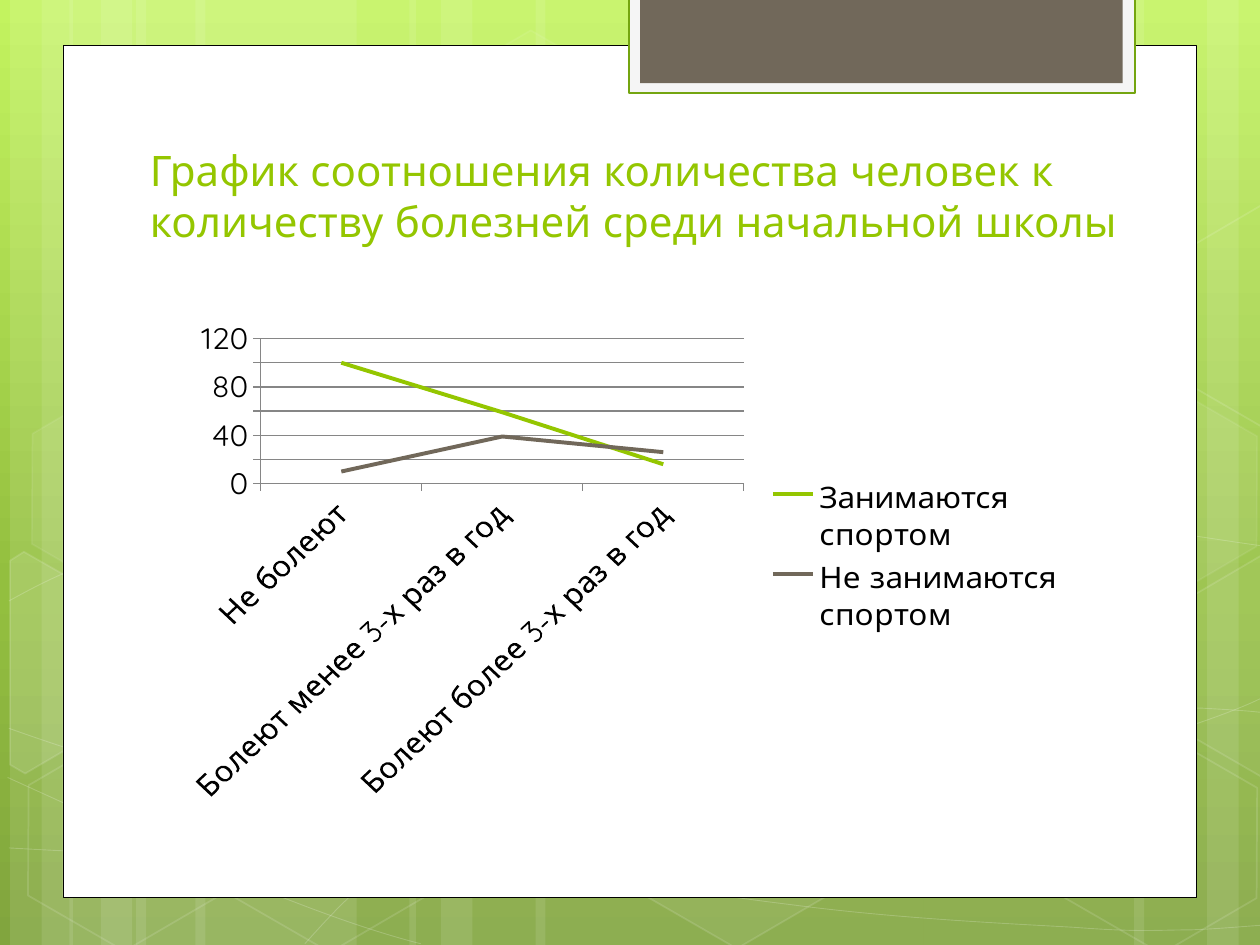
from copy import deepcopy
from lxml import etree
from pptx import Presentation
from pptx.chart.data import CategoryChartData
from pptx.dml.color import RGBColor
from pptx.enum.chart import XL_CHART_TYPE, XL_LEGEND_POSITION, XL_TICK_MARK
from pptx.enum.shapes import MSO_SHAPE
from pptx.enum.text import MSO_ANCHOR, MSO_AUTO_SIZE, PP_ALIGN
from pptx.oxml.ns import qn
from pptx.util import Inches, Pt

RECT, HEX = MSO_SHAPE.RECTANGLE, MSO_SHAPE.HEXAGON
LINE, RIGHT = XL_CHART_TYPE.LINE, XL_LEGEND_POSITION.RIGHT
OUT = XL_TICK_MARK.OUTSIDE
BOTTOM, LEFT, NOFIT = MSO_ANCHOR.BOTTOM, PP_ALIGN.LEFT, MSO_AUTO_SIZE.NONE
FONT = "Quicksand"
WHITE, BLACK, GREEN, BROWN, GRAY = "FFFFFF", "000000", "94C600", "71685A", "868686"

TITLE = "График соотношения количества человек к количеству болезней среди начальной школы"
CATS = ["Не болеют", "Болеют менее 3-х раз в год", "Болеют более 3-х раз в год"]
SERIES = [
    ("Занимаются спортом", [100, 59, 16], GREEN),
    ("Не занимаются спортом", [10, 39, 26], BROWN),
]
STOPS = [(0, "C3F35F"), (0.62, "93BF3F"), (1, "81A53E")]
BANDS = [
    (1.08, 1.75, 0), (0.08, 0.5, 0), (0.33, 0.83, 0), (1.55, 1.75, 0),
    (0.55, 0.5, 0), (0.8, 0.83, 0), (7.33, 1.75, 180), (9.58, 0.5, 180),
    (9, 0.83, 180), (4.25, 3.08, 0), (3.25, 0.5, 0), (3.5, 0.83, 0),
]
CURVES = [
    ([(0.07, 6.73), (0.61, 6.76), (1.15, 6.79), (1.9, 6.78), (2.65, 6.77),
      (3.58, 6.75), (4.58, 6.65), (5.58, 6.55), (7, 6.36), (7.92, 6.17),
      (8.83, 5.98), (9.77, 5.68), (10.07, 5.51)], "CCCC"),
    ([(0.07, 4.77), (0.36, 4.61), (0.65, 4.46), (1.21, 4.31), (1.78, 4.16),
      (2.59, 3.94), (3.47, 3.87), (4.36, 3.8), (5.44, 3.79), (6.54, 3.87),
      (7.64, 3.95), (9.47, 4.26), (10.07, 4.34)], "CCCC"),
    ([(0.06, 6.17), (1.27, 6.72), (2.47, 7.27), (3.34, 7.49)], "C"),
    ([(0.07, 5.78), (0.38, 5.89), (0.7, 6), (1.28, 6.16), (1.86, 6.31),
      (2.73, 6.56), (3.57, 6.73), (4.4, 6.9), (5.45, 7.08), (6.28, 7.18),
      (7.11, 7.29), (8, 7.33), (8.53, 7.36), (9.05, 7.4), (9.19, 7.38),
      (9.45, 7.38), (9.71, 7.37), (9.89, 7.35), (10.07, 7.34)], "CCCCCC"),
    ([(2.42, 7.49), (2.6, 7.29), (2.78, 7.09), (3.02, 6.91), (3.26, 6.73),
      (3.6, 6.53), (3.88, 6.39), (4.16, 6.25), (4.33, 6.19), (4.7, 6.09),
      (5.06, 5.99), (5.73, 5.85), (6.08, 5.78), (6.44, 5.71), (6.49, 5.71),
      (6.8, 5.69), (7.11, 5.66), (7.6, 5.63), (7.94, 5.62), (8.29, 5.61),
      (8.86, 5.62), (8.86, 5.62), (9.53, 5.62), (9.71, 5.63), (9.88, 5.64),
      (9.97, 5.65), (10.06, 5.66), (10.03, 5.65), (10.06, 5.66)], "CCCCCCCLCC"),
]
HEXES = [
    (3.34, 0.36, 4, 8), (4.97, 5.89, 6, 12), (0.11, 5.91, 0, 12),
    (0.14, 3.12, 7, 8), (1.74, 5.92, 0, 12), (7.53, 4.53, 10, 12),
    (8.34, 5.93, 0, 12), (8.34, 3.14, 7, 8),
]
CUTS = [
    ([(0.08, 4.45), (0.19, 4.38), (0.96, 4.82), (0.95, 5.7), (0.2, 6.14), (0.08, 6.07)], 10),
    ([(9.26, 4.85), (10.01, 4.41), (10.09, 4.46), (10.09, 6.13), (10.02, 6.17), (9.26, 5.73)], 4),
    ([(9.26, 2.07), (10.01, 1.63), (10.1, 1.68), (10.09, 3.35), (10.02, 3.39), (9.26, 2.95)], 0),
]
PANELS = [
    ((0.5, 0.36, 9, 6.76), WHITE, BLACK, 0.5),
    ((4.99, -0.02, 4.02, 0.76), "F5F5F5", "74A510", 1.25),
    ((5.08, -0.02, 3.83, 0.68), BROWN, None, 0),
]


def rgb(code):
    return RGBColor.from_string(code)


def fade(shape, route, alpha):
    if alpha < 100:
        tint = shape.element.spPr.find("/".join(qn(tag) for tag in route))
        etree.SubElement(tint, qn("a:alpha"), val=str(alpha * 1000))


def paint(shape, fill=None, alpha=100, line=None, width=1, clear=100):
    shape.shadow.inherit = False
    if fill and alpha:
        shape.fill.solid()
        shape.fill.fore_color.rgb = rgb(fill)
        fade(shape, ["a:solidFill", "a:srgbClr"], alpha)
    else:
        shape.fill.background()
    if line:
        shape.line.color.rgb = rgb(line)
        shape.line.width = Pt(width)
        fade(shape, ["a:ln", "a:solidFill", "a:srgbClr"], clear)
    else:
        shape.line.fill.background()


def add(slide, kind, box):
    return slide.shapes.add_shape(kind, *map(Inches, box))


def trace(slide, points, close):
    spots = [(Inches(x), Inches(y)) for x, y in points]
    pen = slide.shapes.build_freeform(*spots[0])
    pen.add_line_segments(spots[1:], close=close)
    return pen.convert_to_shape()


def bend(shape, kinds):
    legs = iter(list(shape.element.iter(qn("a:lnTo"))))
    for kind in kinds:
        leg = next(legs)
        if kind == "C":
            leg.addprevious(curve := etree.Element(qn("a:cubicBezTo")))
            for part in (leg, next(legs), next(legs)):
                curve.append(part[0])
                part.getparent().remove(part)


def set_back(slide):
    fill = slide.background.fill
    fill.gradient()
    fill.gradient_angle = 270
    stops = slide.element.find(".//" + qn("a:gsLst"))
    stops.append(deepcopy(stops[-1]))
    for stop, (place, code) in zip(fill.gradient_stops, STOPS):
        stop.position = place
        stop.color.rgb = rgb(code)


def draw_decor(slide):
    for left, width, turn in BANDS:
        band = add(slide, RECT, (left, 0, width, 7.5))
        band.rotation = turn
        paint(band, WHITE, 10)
    for points, kinds in CURVES:
        wave = trace(slide, points, False)
        bend(wave, kinds)
        paint(wave, line=WHITE, width=0.5, clear=20)
    for left, top, alpha, clear in HEXES:
        cell = add(slide, HEX, (left, top, 1.75, 1.52))
        cell.rotation = 30
        cell.adjustments[0] = 0.285
        paint(cell, WHITE, alpha, WHITE, 1, clear)
    for points, alpha in CUTS:
        paint(trace(slide, points, True), WHITE, alpha, WHITE, 1, 12)
    for box, fill, line, width in PANELS:
        paint(add(slide, RECT, box), fill, 100, line, width)


def set_title(slide):
    title = slide.shapes.title
    slide.shapes.element.append(title.element)
    title.left, title.top, title.width, title.height = map(Inches, (1.09, 0.78, 7.89, 1.22))
    frame = title.text_frame
    frame.text = TITLE
    frame.word_wrap, frame.auto_size = True, NOFIT
    frame.vertical_anchor = BOTTOM
    par = frame.paragraphs[0]
    par.alignment = LEFT
    font = par.runs[0].font
    font.name, font.size = FONT, Pt(24)
    font.color.rgb = rgb(GREEN)


def add_graph(slide):
    data = CategoryChartData()
    data.categories = CATS
    for name, vals, code in SERIES:
        data.add_series(name, vals)
    box = map(Inches, (1.14, 2.54, 7.41, 3.84))
    chart = slide.shapes.add_chart(LINE, *box, data).chart
    chart.has_title = False
    chart.font.name, chart.font.size = FONT, Pt(18)
    chart.font.color.rgb = rgb(BLACK)
    chart.has_legend = True
    chart.legend.position = RIGHT
    chart.legend.include_in_layout = False
    plot = chart.plots[0]
    plot.vary_by_categories = False
    for series, (name, vals, code) in zip(plot.series, SERIES):
        series.smooth = False
        series.format.line.color.rgb = rgb(code)
        series.format.line.width = Pt(2.25)
    axes = chart.category_axis, chart.value_axis
    for axis in axes:
        axis.major_tick_mark = OUT
        axis.format.line.color.rgb = rgb(GRAY)
    axes[1].has_major_gridlines = True
    axes[1].major_gridlines.format.line.color.rgb = rgb(GRAY)


def main():
    deck = Presentation()
    deck.slide_width, deck.slide_height = Inches(10), Inches(7.5)
    slide = deck.slides.add_slide(deck.slide_layouts[5])
    set_back(slide)
    draw_decor(slide)
    set_title(slide)
    add_graph(slide)
    deck.save("out.pptx")


if __name__ == "__main__":
    main()
